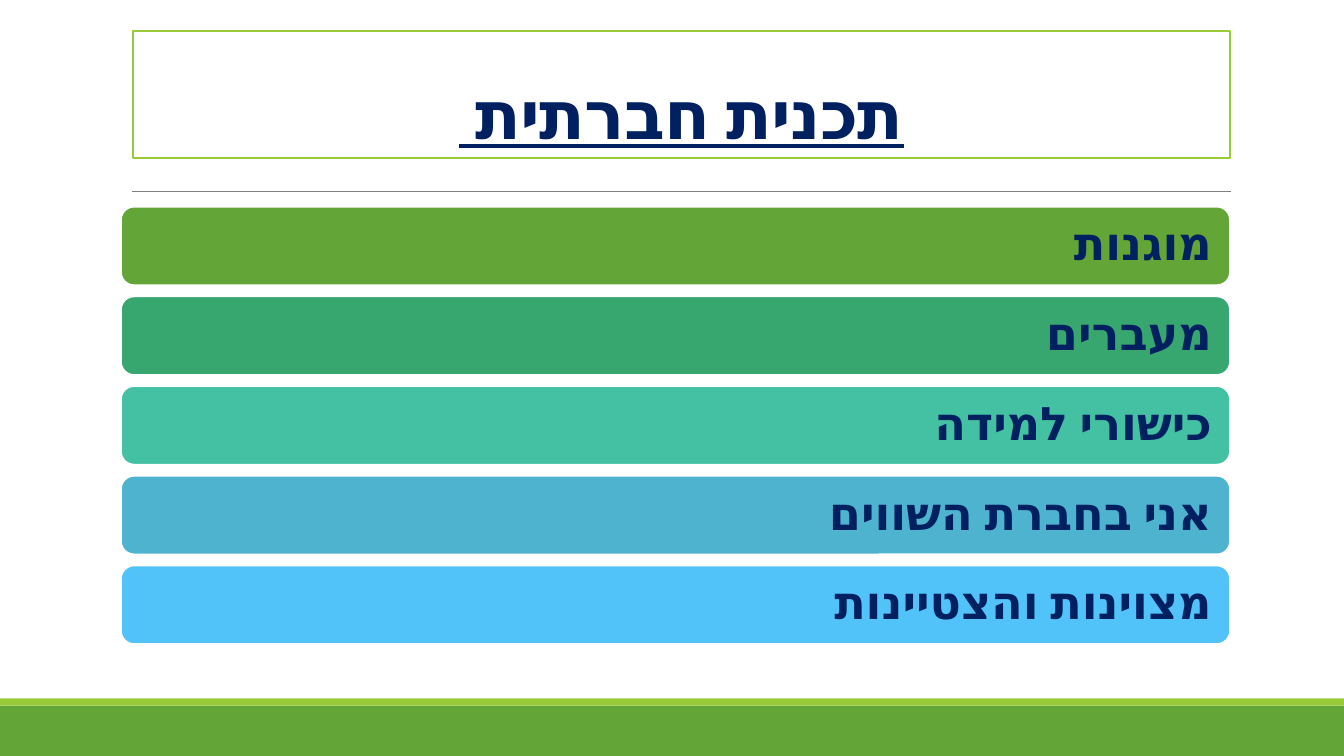
from lxml import etree
from pptx import Presentation
from pptx.dml.color import RGBColor
from pptx.enum import lang, shapes, text
from pptx.oxml import ns
from pptx.util import Inches, Pt

NAVY = RGBColor(0x00, 0x20, 0x60)
WHITE = RGBColor(0xFF, 0xFF, 0xFF)
GRAY = RGBColor(0x80, 0x80, 0x80)
GREEN = RGBColor(0x63, 0xA5, 0x37)
LIME = RGBColor(0x99, 0xCB, 0x38)
JADE = RGBColor(0x37, 0xA7, 0x6F)
TEAL = RGBColor(0x44, 0xC1, 0xA3)
STEEL = RGBColor(0x4E, 0xB3, 0xCF)
SKY = RGBColor(0x51, 0xC3, 0xF9)

TOPICS = [
    ("מוגנות", GREEN),
    ("מעברים", JADE),
    ("כישורי למידה", TEAL),
    ("אני בחברת השווים", STEEL),
    ("מצוינות והצטיינות", SKY),
]
FIRST_TOP, PITCH = 2.05, 0.89


def write_hebrew(frame, wording, size, align, spacing, anchor):
    frame.word_wrap = True
    frame.auto_size = text.MSO_AUTO_SIZE.NONE
    frame.vertical_anchor = anchor
    line = frame.paragraphs[0]
    line.alignment = align
    line.line_spacing = spacing
    line._p.get_or_add_pPr().set("rtl", "1")
    words = line.add_run()
    words.text = wording
    words.font.color.rgb = NAVY
    style = {"name": "Roboto", "size": Pt(size), "bold": True,
             "language_id": lang.MSO_LANGUAGE_ID.HEBREW}
    for key, value in style.items():
        setattr(words.font, key, value)
    properties = words._r.get_or_add_rPr()
    etree.SubElement(properties, ns.qn("a:cs")).set("typeface", "Roboto")
    return words


def add_block(kind, left, top, width, height, color):
    block = slide.shapes.add_shape(
        kind, Inches(left), Inches(top), Inches(width), Inches(height))
    block.shadow.inherit = False
    block.fill.solid()
    block.fill.fore_color.rgb = color
    block.line.fill.background()
    return block


deck = Presentation()
deck.slide_width, deck.slide_height = Inches(13.33), Inches(7.5)
slide = deck.slides.add_slide(deck.slide_layouts[5])

add_block(shapes.MSO_SHAPE.RECTANGLE, 0, 7, 13.33, 0.5, GREEN)
add_block(shapes.MSO_SHAPE.RECTANGLE, 0, 6.93, 13.33, 0.07, LIME)

divider = slide.shapes.add_connector(
    shapes.MSO_CONNECTOR.STRAIGHT, Inches(1.31), Inches(1.9), Inches(12.21), Inches(1.9))
divider.line.color.rgb = GRAY
divider.line.width = Pt(0.5)
etree.SubElement(divider._element.spPr, ns.qn("a:effectLst"))

program = slide.shapes.title
for key, value in {"left": 1.32, "top": 0.31, "width": 10.88, "height": 1.26}.items():
    setattr(program, key, Inches(value))
program.fill.solid()
program.fill.fore_color.rgb = WHITE
program.line.color.rgb = LIME
program.line.width = Pt(1.25)
heading = write_hebrew(program.text_frame, "תכנית חברתית ", 48,
                       text.PP_ALIGN.CENTER, 0.85, text.MSO_ANCHOR.BOTTOM)
heading.font.underline = True
heading._r.get_or_add_rPr().set("spc", "-50")

for row, (topic, color) in enumerate(TOPICS):
    bar = add_block(shapes.MSO_SHAPE.ROUNDED_RECTANGLE,
                    1.2, FIRST_TOP + row * PITCH, 11, 0.78, color)
    bar.line.color.rgb = WHITE
    bar.line.width = Pt(1.25)
    for side in ("left", "right", "top", "bottom"):
        setattr(bar.text_frame, f"margin_{side}", Inches(0.14))
    write_hebrew(bar.text_frame, topic, 33,
                 text.PP_ALIGN.RIGHT, 0.9, text.MSO_ANCHOR.MIDDLE)

deck.save("out.pptx")
